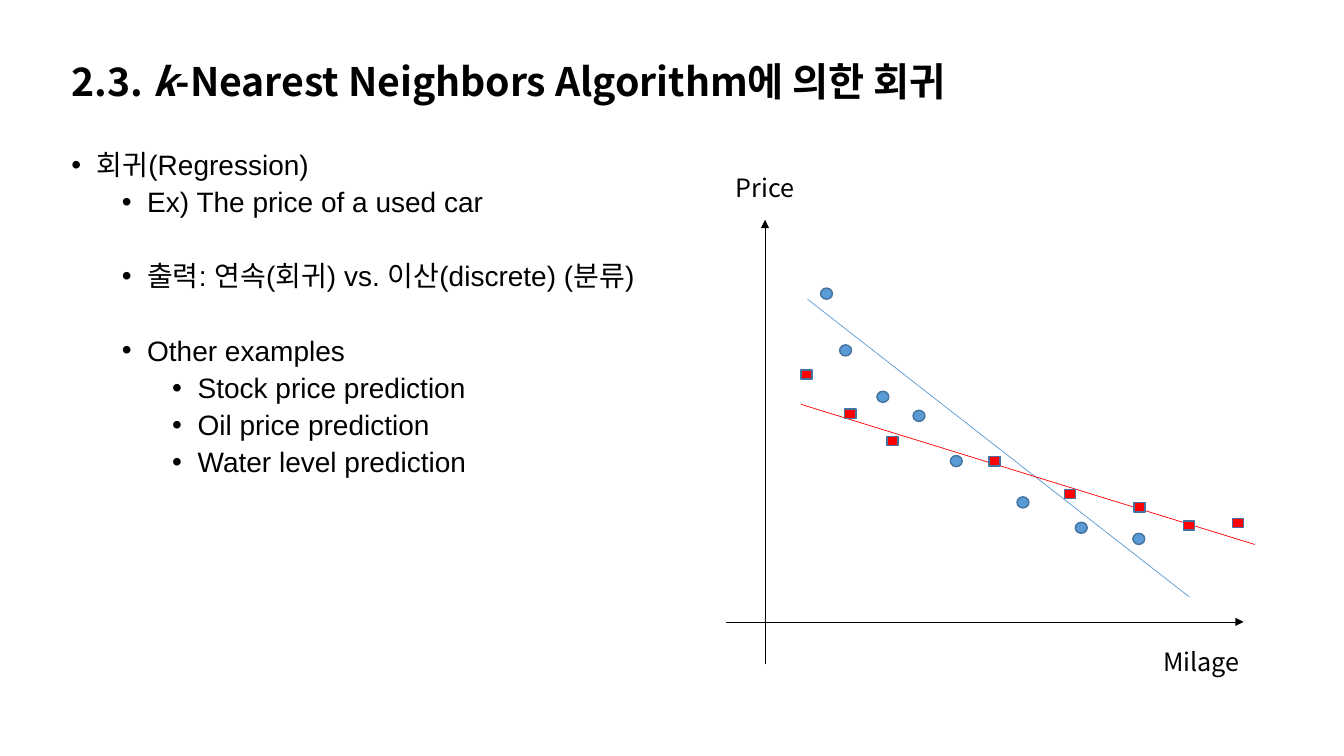
"""Build a slide on regression with k-nearest neighbors."""
from lxml.etree import SubElement
from pptx import Presentation
from pptx.dml.color import RGBColor as Rgb
from pptx.enum.shapes import MSO_CONNECTOR as Link, MSO_SHAPE as Form
from pptx.enum.text import MSO_ANCHOR as Anchor, MSO_AUTO_SIZE as Fit, PP_ALIGN as Align
from pptx.oxml.ns import qn
from pptx.util import Cm, Pt

HUES = {"black": "000000", "blue": "5B9BD5", "edge": "43739E", "red": "FF0000"}
SANS, BODY = "Noto Sans CJK KR", "Arial"

TITLE = [("2.3. ", False), ("k", True), ("-Nearest Neighbors Algorithm에 의한 회귀", False)]
POINTS = [
    (0, 10, Align.LEFT, "회귀(Regression)"),
    (1, 5, Align.LEFT, "Ex) The price of a used car"),
    (1, 31.5, Align.JUSTIFY, "출력: 연속(회귀) vs. 이산(discrete) (분류)"),
    (1, 31.5, Align.JUSTIFY, "Other examples"),
    (2, 5, Align.JUSTIFY, "Stock price prediction"),
    (2, 5, Align.JUSTIFY, "Oil price prediction"),
    (2, 5, Align.JUSTIFY, "Water level prediction"),
]
LABELS = [("Milage", 29.06, 16.15, 3.28), ("Price", 18.29, 4.22, 3.63)]
SERIES = [
    (Form.OVAL, "blue", 0.3, 0.28,
     [(20.68, 7.26), (21.16, 8.69), (22.1, 9.86), (23.01, 10.34),
      (23.95, 11.48), (25.63, 12.52), (27.1, 13.16), (28.55, 13.44)]),
    (Form.RECTANGLE, "red", 0.28, 0.23,
     [(20.19, 9.32), (21.29, 10.31), (22.35, 11), (24.92, 11.51),
      (26.82, 12.34), (28.58, 12.67), (29.82, 13.13), (31.06, 13.06)]),
]
LINES = [
    ("black", True, (18.29, 15.67, 31.34, 15.67)),
    ("black", True, (19.28, 16.74, 19.28, 5.54)),
    ("blue", False, (20.35, 7.54, 29.97, 15.04)),
    ("red", False, (20.19, 10.19, 31.62, 13.72)),
]


def hue(name):
    return Rgb.from_string(HUES[name])


def cms(*sizes):
    return [Cm(size) for size in sizes]


def style(para, size, face, bold=False):
    font = para.font
    font.size, font.bold, font.name = Pt(size), bold, face
    font.color.rgb = hue("black")
    if face == SANS:
        props = para._p.pPr.find(qn("a:defRPr"))
        SubElement(props, qn("a:ea"), typeface=face)


def add_title(slide):
    title = slide.shapes.title
    title.left, title.top, title.width, title.height = cms(1.55, 1.32, 29.21, 1.57)
    frame = title.text_frame
    frame.auto_size, frame.vertical_anchor = Fit.NONE, Anchor.MIDDLE
    para = frame.paragraphs[0]
    para.alignment, para.line_spacing = Align.LEFT, 0.9
    for text, slant in TITLE:
        run = para.add_run()
        run.text, run.font.italic = text, slant
    style(para, 28, SANS, True)


def add_points(slide):
    frame = slide.shapes.add_textbox(*cms(1.55, 3.68, 15.7, 14.05)).text_frame
    frame.word_wrap = True
    for row, (level, gap, align, text) in enumerate(POINTS):
        para = frame.add_paragraph() if row else frame.paragraphs[0]
        para.text, para.level, para.alignment = text, level, align
        para.line_spacing, para.space_before = 0.9, Pt(gap)
        props = para._p.get_or_add_pPr()
        props.set("marL", str(Cm(0.64 + 1.27 * level)))
        props.set("indent", str(Cm(-0.64)))
        SubElement(props, qn("a:buFont"), typeface=BODY)
        SubElement(props, qn("a:buChar"), char="•")
        style(para, 20, BODY)


def add_plot(slide):
    plot = slide.shapes.add_group_shape().shapes
    for text, left, top, width in LABELS:
        frame = plot.add_textbox(*cms(left, top, width, 1.02)).text_frame
        frame.word_wrap = True
        frame.text = text
        style(frame.paragraphs[0], 18, SANS)
    for color, arrow, ends in LINES:
        line = plot.add_connector(Link.STRAIGHT, *cms(*ends))
        line.line.color.rgb, line.line.width = hue(color), Pt(0.5)
        if arrow:
            SubElement(line.line._get_or_add_ln(), qn("a:tailEnd"), type="triangle")
        SubElement(line._element.spPr, qn("a:effectLst"))
    for form, color, width, height, spots in SERIES:
        for left, top in spots:
            mark = plot.add_shape(form, *cms(left, top, width, height))
            mark.shadow.inherit = False
            mark.fill.solid()
            mark.fill.fore_color.rgb = hue(color)
            mark.line.color.rgb, mark.line.width = hue("edge"), Pt(1)


def main():
    deck = Presentation()
    deck.slide_width, deck.slide_height = cms(33.87, 19.05)
    slide = deck.slides.add_slide(deck.slide_layouts[5])
    add_title(slide)
    add_points(slide)
    add_plot(slide)
    deck.save("out.pptx")


if __name__ == "__main__":
    main()
